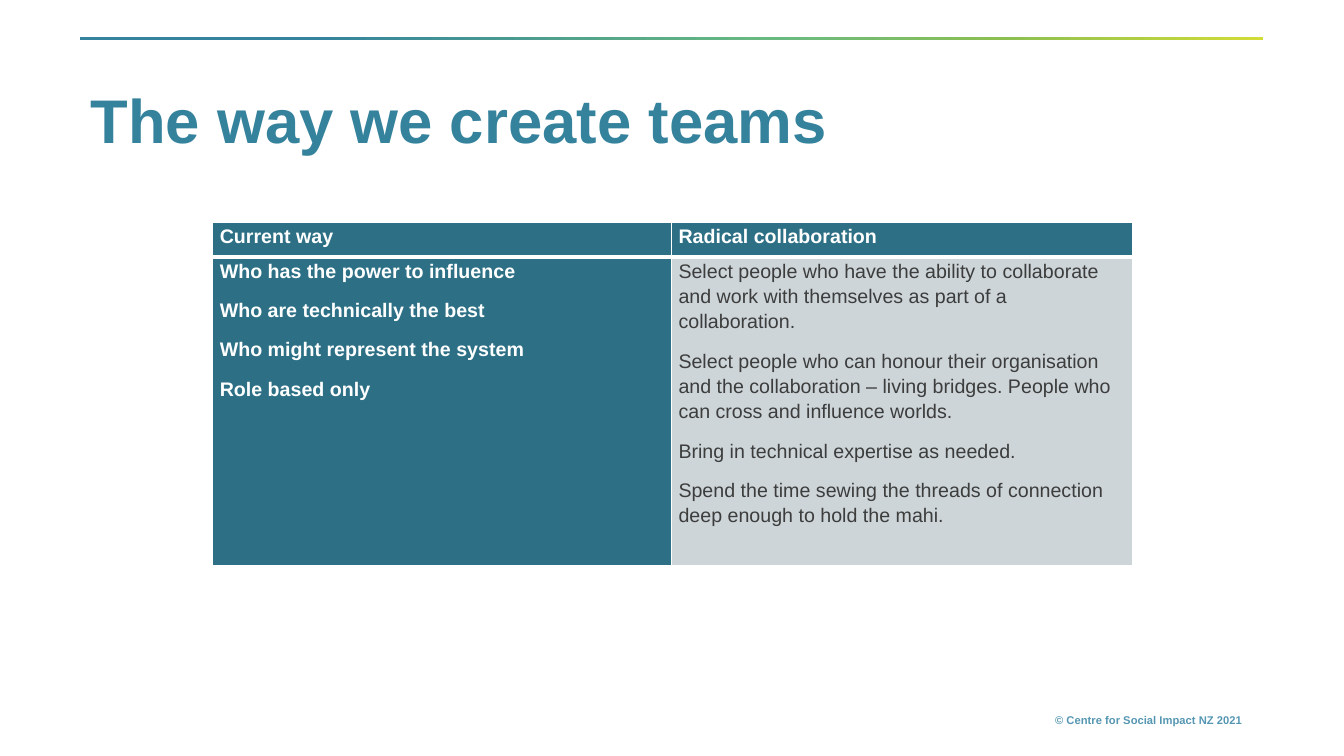
from lxml import etree
from pptx import Presentation
from pptx.dml.color import RGBColor
from pptx.enum.shapes import MSO_SHAPE
from pptx.enum.text import MSO_ANCHOR, MSO_AUTO_SIZE, PP_ALIGN
from pptx.oxml.ns import qn
from pptx.util import Inches, Pt

RECTANGLE = MSO_SHAPE.RECTANGLE
MIDDLE, TOP = MSO_ANCHOR.MIDDLE, MSO_ANCHOR.TOP
LEFT, RIGHT = PP_ALIGN.LEFT, PP_ALIGN.RIGHT
NO_AUTOFIT = MSO_AUTO_SIZE.NONE

WHITE = RGBColor(0xFF, 0xFF, 0xFF)
TITLE_BLUE = RGBColor(0x35, 0x82, 0x9C)
FOOTER_BLUE = RGBColor(0x55, 0x96, 0xB2)
TEAL = RGBColor(0x2D, 0x70, 0x86)
PALE_GREY = RGBColor(0xCD, 0xD5, 0xD9)
DARK_GREY = RGBColor(0x3C, 0x3D, 0x3C)
RULE_STOPS = [
    (0, RGBColor(0xD2, 0xDC, 0x36)),
    (22, RGBColor(0x8C, 0xBF, 0x52)),
    (41, RGBColor(0x69, 0xBA, 0x80)),
    (80, RGBColor(0x35, 0x83, 0x9C)),
]

CURRENT_WAY = [
    "Who has the power to influence",
    "Who are technically the best",
    "Who might represent the system",
    "Role based only",
]
RADICAL_COLLABORATION = [
    "Select people who have the ability to collaborate and work with "
    "themselves as part of a collaboration.",
    "Select people who can honour their organisation and the collaboration "
    "– living bridges. People who can cross and influence worlds.",
    "Bring in technical expertise as needed.",
    "Spend the time sewing the threads of connection deep enough to hold "
    "the mahi.",
]


class SlideBuilder:
    font = "Arial"

    def __init__(self, slide):
        self.slide = slide

    def add_text(self, frame, paragraphs, size, color, bold=True, align=LEFT,
                 line_spacing=1.0, space_after=0):
        for index, text in enumerate(paragraphs):
            paragraph = frame.add_paragraph() if index else frame.paragraphs[0]
            paragraph.alignment = align
            paragraph.line_spacing = line_spacing
            paragraph.space_before = Pt(0)
            paragraph.space_after = Pt(space_after)
            run = paragraph.add_run()
            run.text = text
            run.font.name = self.font
            run.font.size = Pt(size)
            run.font.bold = bold
            run.font.color.rgb = color

    def title(self, text, left, top, width, height):
        heading = self.slide.shapes.title
        heading.left, heading.top = Inches(left), Inches(top)
        heading.width, heading.height = Inches(width), Inches(height)
        frame = heading.text_frame
        frame.auto_size = NO_AUTOFIT
        frame.vertical_anchor = MIDDLE
        self.add_text(frame, [text], 44, TITLE_BLUE, line_spacing=0.9)

    def gradient_rule(self, stops, left, top, width, height):
        rule = self.slide.shapes.add_shape(
            RECTANGLE, Inches(left), Inches(top), Inches(width), Inches(height))
        rule.shadow.inherit = False
        rule.line.fill.background()
        rule.fill.gradient()
        rule.fill.gradient_angle = 180
        stop_list = next(rule.element.iter(qn("a:gsLst")))
        for default_stop in list(stop_list):
            stop_list.remove(default_stop)
        for percent, color in stops:
            stop = etree.SubElement(stop_list, qn("a:gs"), pos=str(percent * 1000))
            etree.SubElement(stop, qn("a:srgbClr"), val=str(color))

    def footer(self, text, left, top, width, height):
        box = self.slide.shapes.add_textbox(
            Inches(left), Inches(top), Inches(width), Inches(height))
        box.text_frame.word_wrap = True
        self.add_text(box.text_frame, [text], 8, FOOTER_BLUE, align=RIGHT)

    def borders(self, cell, top, bottom):
        properties = cell._tc.get_or_add_tcPr()
        for side, points in (("L", 1), ("R", 1), ("T", top), ("B", bottom)):
            line = etree.SubElement(
                properties, qn(f"a:ln{side}"), w=str(Pt(points)))
            fill = etree.SubElement(line, qn("a:solidFill"))
            etree.SubElement(fill, qn("a:srgbClr"), val=str(WHITE))

    def cell(self, cell, paragraphs, fill, color, bold, top, bottom):
        self.borders(cell, top, bottom)
        cell.fill.solid()
        cell.fill.fore_color.rgb = fill
        cell.margin_left = cell.margin_right = Inches(0.07)
        cell.margin_top = cell.margin_bottom = 0
        cell.vertical_anchor = TOP
        self.add_text(cell.text_frame, paragraphs, 14, color, bold,
                      line_spacing=1.15, space_after=10)

    def comparison(self, headings, columns, left, top, widths, heights):
        table = self.slide.shapes.add_table(
            2, len(widths), Inches(left), Inches(top),
            Inches(sum(widths)), Inches(sum(heights))).table
        table.horz_banding = False
        for row, height in zip(table.rows, heights):
            row.height = Inches(height)
        for index, width in enumerate(widths):
            table.columns[index].width = Inches(width)
            self.cell(table.cell(0, index), [headings[index]],
                      TEAL, WHITE, True, 1, 3)
            paragraphs, fill, color, bold = columns[index]
            self.cell(table.cell(1, index), paragraphs, fill, color, bold, 3, 1)


def main():
    presentation = Presentation()
    presentation.slide_width = Inches(13.33)
    presentation.slide_height = Inches(7.5)
    title_only = presentation.slide_layouts[5]
    builder = SlideBuilder(presentation.slides.add_slide(title_only))
    builder.footer("© Centre for Social Impact NZ 2021", 8.89, 7.03, 3.53, 0.24)
    builder.gradient_rule(RULE_STOPS, 0.79, 0.37, 11.74, 0.03)
    builder.title("The way we create teams", 0.8, 0.77, 11.73, 0.92)
    builder.comparison(
        ["Current way", "Radical collaboration"],
        [(CURRENT_WAY, TEAL, WHITE, True),
         (RADICAL_COLLABORATION, PALE_GREY, DARK_GREY, False)],
        2.11, 2.21, [4.55, 4.57], [0.34, 3.06])
    presentation.save("out.pptx")


if __name__ == "__main__":
    main()
